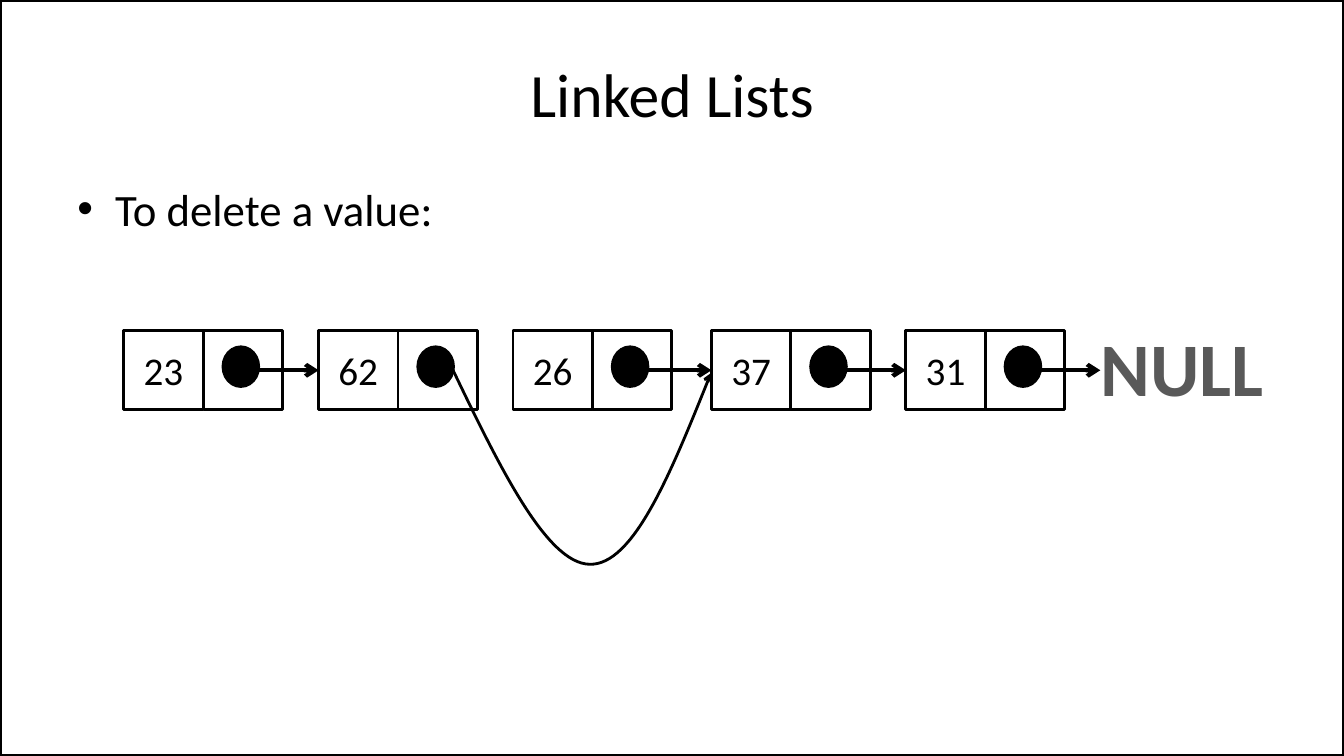
from lxml import etree
from pptx import Presentation
from pptx import util as u
from pptx.dml.color import RGBColor
from pptx.enum import shapes, text
from pptx.oxml import ns

BLACK = RGBColor(0x00, 0x00, 0x00)
GREY = RGBColor(0x59, 0x59, 0x59)
WIDTH, HEIGHT = 33.87, 19.05
CELL = 2.0
NODE_TOP = 8.33
MIDDLE = NODE_TOP + CELL / 2
NODES = [("23", 3.12), ("62", 8.03), ("26", 12.93), ("37", 17.93), ("31", 22.83)]
ARROW_OFFSET, ARROW_LENGTH = 3.4, 1.5
BYPASS = [(11.38, 9.25), (12.57, 11.73), (13.77, 14.2), (14.86, 14.22),
          (15.95, 14.25), (16.94, 11.84), (17.92, 9.4)]


def write(frame, content, size, color=BLACK, bold=False,
          align=text.PP_ALIGN.CENTER, anchor=text.MSO_ANCHOR.MIDDLE, wrap=True, bullet=None):
    """Put formatted text into a text frame."""
    frame.word_wrap = wrap
    frame.vertical_anchor = anchor
    paragraph = frame.paragraphs[0]
    paragraph.alignment = align
    run = paragraph.add_run()
    run.text = content
    font = run.font
    font.name, font.size, font.bold = "Calibri", u.Pt(size), bold
    font.color.rgb = color
    if bullet:
        properties = paragraph._p.get_or_add_pPr()
        properties.set("marL", str(u.Cm(0.95)))
        properties.set("indent", str(-u.Cm(0.95)))
        etree.SubElement(properties, ns.qn("a:buFont")).set("typeface", "Arial")
        etree.SubElement(properties, ns.qn("a:buChar")).set("char", bullet)


class ListDiagram:
    """Draw linked-list elements on one slide in a shared style."""

    def __init__(self, slide):
        self.shapes = slide.shapes
        self.ink = BLACK

    def outline(self, line, weight):
        line.color.rgb = self.ink
        line.width = u.Pt(weight)

    def add_arrowhead(self, line):
        properties = line._get_or_add_ln()
        etree.SubElement(properties, ns.qn("a:tailEnd")).set("type", "arrow")

    def shape(self, kind, left, top, width, height, weight=2, filled=False):
        item = self.shapes.add_shape(kind, *map(u.Cm, (left, top, width, height)))
        item.shadow.inherit = False
        if filled:
            item.fill.solid()
            item.fill.fore_color.rgb = self.ink
        else:
            item.fill.background()
        self.outline(item.line, weight)
        return item

    def box(self, left, top, width, height, weight=2):
        return self.shape(shapes.MSO_SHAPE.RECTANGLE, left, top, width, height, weight)

    def label(self, content, left, top, width, height, **style):
        area = self.shapes.add_textbox(*map(u.Cm, (left, top, width, height)))
        write(area.text_frame, content, **style)

    def node(self, value, left):
        value_cell = self.box(left, NODE_TOP, CELL, CELL)
        write(value_cell.text_frame, value, size=28)
        self.shape(shapes.MSO_SHAPE.OVAL, left + 2.5, 8.74, 0.9, 1.0, filled=True)
        self.box(left + CELL, NODE_TOP, CELL, CELL)
        return value_cell

    def arrow(self, left, target=None):
        start = left + ARROW_OFFSET
        link = self.shapes.add_connector(
            shapes.MSO_CONNECTOR.STRAIGHT,
            *map(u.Cm, (start, MIDDLE, start + ARROW_LENGTH, MIDDLE)))
        if target is not None:
            link.end_connect(target, 1)
        self.outline(link.line, 3)
        self.add_arrowhead(link.line)
        etree.SubElement(link._element.spPr, ns.qn("a:effectLst"))

    def curve(self, points):
        start, *rest = [(u.Cm(x), u.Cm(y)) for x, y in points]
        builder = self.shapes.build_freeform(*start)
        builder.add_line_segments(rest, close=False)
        bypass = builder.convert_to_shape()
        bypass.shadow.inherit = False
        bypass.fill.background()
        self.outline(bypass.line, 2)
        self.add_arrowhead(bypass.line)
        outline_path = bypass._element.find(".//" + ns.qn("a:path"))
        segments = outline_path.findall(ns.qn("a:lnTo"))
        for first in range(0, len(segments), 3):
            bezier = etree.SubElement(outline_path, ns.qn("a:cubicBezTo"))
            for segment in segments[first:first + 3]:
                bezier.append(segment[0])
                outline_path.remove(segment)


def main():
    """Build the slide about deleting a value from a linked list."""
    deck = Presentation()
    deck.slide_width, deck.slide_height = u.Cm(WIDTH), u.Cm(HEIGHT)
    diagram = ListDiagram(deck.slides.add_slide(deck.slide_layouts[6]))
    diagram.box(0, 0, WIDTH, HEIGHT, weight=3)
    diagram.label("Linked Lists", 1.7, 0.76, 30.48, 3.18, size=44)
    diagram.label("To delete a value:", 1.7, 4.45, 30.48, 12.57, size=32, bullet="•",
                  align=text.PP_ALIGN.LEFT, anchor=text.MSO_ANCHOR.TOP)

    cells = {value: diagram.node(value, left) for value, left in NODES}
    lefts = dict(NODES)
    for source, target in [("23", "62"), ("26", "37"), ("37", "31"), ("31", None)]:
        diagram.arrow(lefts[source], cells.get(target))
    diagram.label("NULL", 27.46, 7.95, 4.67, 2.57, size=54, color=GREY, bold=True,
                  anchor=text.MSO_ANCHOR.TOP, wrap=False)
    diagram.curve(BYPASS)
    deck.save("out.pptx")


if __name__ == "__main__":
    main()
